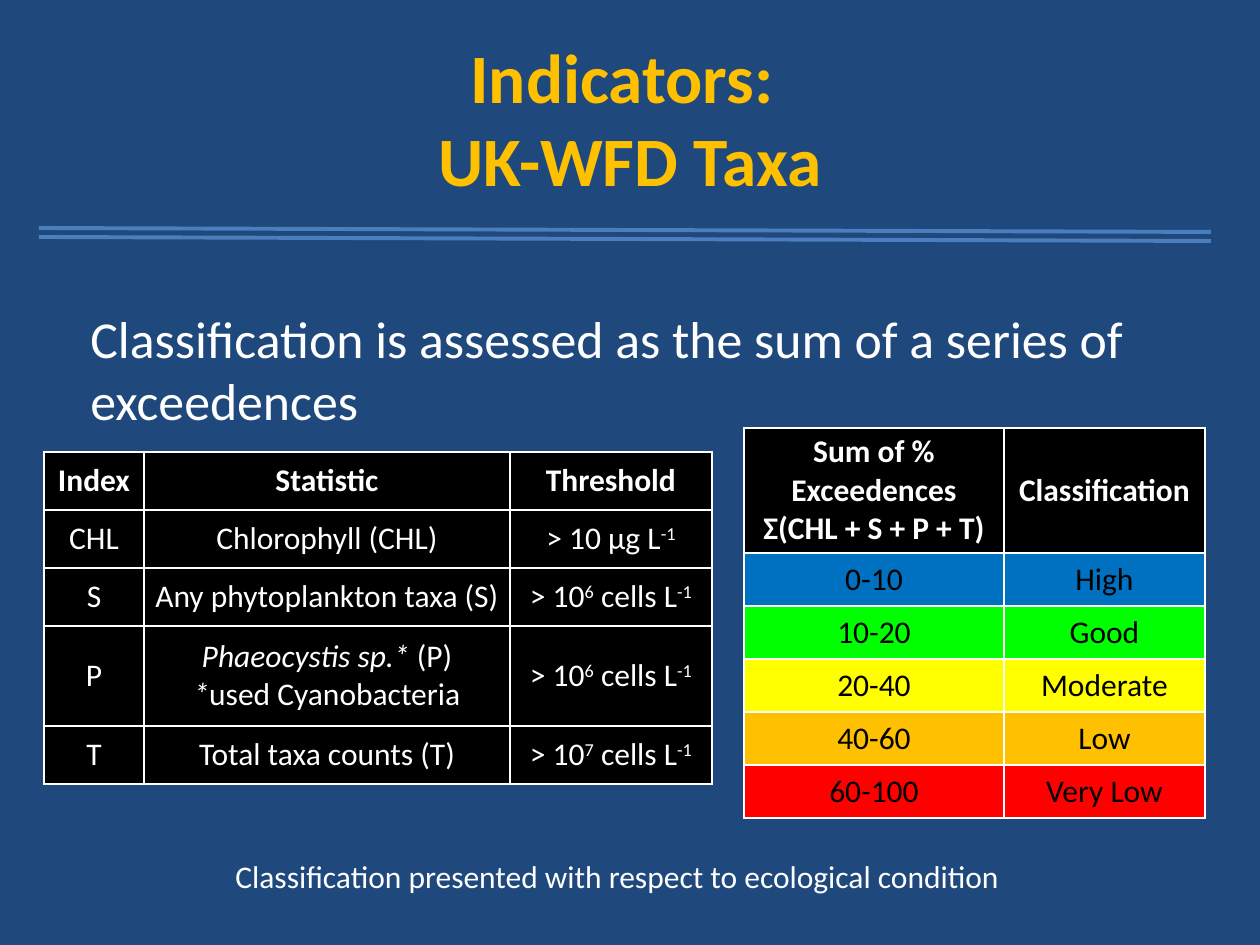
from lxml import etree
from pptx import Presentation
from pptx import util as u
from pptx.dml.color import RGBColor
from pptx.enum import shapes, text
from pptx.oxml import ns

PX = 914400 / 126
HUES = {
    "back": "1F497D", "gold": "FFC000", "white": "FFFFFF", "black": "000000",
    "rule": "4B7EBC", "blue": "0070C0", "green": "00FF00",
    "yellow": "FFFF00", "red": "FF0000",
}
INDEX = [
    ["Index", "Statistic", "Threshold"],
    ["CHL", "Chlorophyll (CHL)", "> 10 µg L^-1^"],
    ["S", "Any phytoplankton taxa (S)", "> 10^6^ cells L^-1^"],
    ["P", "_Phaeocystis sp.* _(P)\n_*_used Cyanobacteria", "> 10^6^ cells L^-1^"],
    ["T", "Total taxa counts (T)", "> 10^7^ cells L^-1^"],
]
CLASSES = [
    ["Sum of % Exceedences\nΣ(CHL + S + P + T)", "Classification"],
    ["0-10", "High"],
    ["10-20", "Good"],
    ["20-40", "Moderate"],
    ["40-60", "Low"],
    ["60-100", "Very Low"],
]


def px(n):
    return u.Emu(round(n * PX))


def hue(name):
    return RGBColor.from_string(HUES[name])


def style(run, size, color, bold=False):
    font = run.font
    font.name = "Calibri"
    font.size = u.Pt(size)
    font.bold = bold
    font.color.rgb = hue(color)


def label(slide, box, words, size, color, bold=False):
    frame = slide.shapes.add_textbox(*map(px, box)).text_frame
    frame.word_wrap = True
    frame.text = words
    for run in frame.paragraphs[0].runs:
        style(run, size, color, bold)
    return frame


def title(slide, box):
    frame = label(slide, box, "Indicators: \vUK-WFD Taxa", 39.6, "gold", True)
    frame.vertical_anchor = text.MSO_ANCHOR.MIDDLE
    frame.paragraphs[0].alignment = text.PP_ALIGN.CENTER


def rules(slide, box):
    x, y, w, h = box
    for top in (y, y + 9):
        line = slide.shapes.add_connector(
            shapes.MSO_CONNECTOR.STRAIGHT, px(x), px(top), px(x + w), px(top + h))
        line.line.color.rgb = hue("rule")
        line.line.width = u.Pt(2.25)
        etree.SubElement(line._element.spPr, ns.qn("a:effectLst"))


def body(slide, box):
    frame = label(
        slide, box,
        "Classification is assessed as the sum of a series of exceedences",
        29.6, "white")
    frame.paragraphs[0].space_before = u.Pt(6)


def edge(cell):
    props = cell._tc.get_or_add_tcPr()
    for spot, side in enumerate(("lnL", "lnR", "lnT", "lnB")):
        line = etree.Element(ns.qn("a:" + side), w=str(u.Pt(1)))
        fill = etree.SubElement(line, ns.qn("a:solidFill"))
        etree.SubElement(fill, ns.qn("a:srgbClr"), val=HUES["white"])
        props.insert(spot, line)


def write(para, words, color, bold):
    para.alignment = text.PP_ALIGN.CENTER
    for i, part in enumerate(words.split("_")):
        for j, bit in enumerate(part.split("^")):
            if bit:
                run = para.add_run()
                run.text = bit
                style(run, 18, color, bold)
                if i % 2:
                    run.font.italic = True
                if j % 2:
                    run.font._element.set("baseline", "30000")


def paint(cell, words, fill, color, bold):
    cell.fill.solid()
    cell.fill.fore_color.rgb = hue(fill)
    cell.margin_left = cell.margin_right = px(9)
    cell.margin_top = cell.margin_bottom = px(5)
    cell.vertical_anchor = text.MSO_ANCHOR.MIDDLE
    edge(cell)
    frame = cell.text_frame
    for i, line in enumerate(words.split("\n")):
        para = frame.add_paragraph() if i else frame.paragraphs[0]
        write(para, line, color, bold)


def grid(slide, spot, data, wide, high, fills, color):
    box = (*spot, sum(wide), sum(high))
    table = slide.shapes.add_table(len(high), len(wide), *map(px, box)).table
    for col, w in zip(table.columns, wide):
        col.width = px(w)
    for r, (row, h) in enumerate(zip(data, high)):
        table.rows[r].height = px(h)
        for c, words in enumerate(row):
            ink = color if r else "white"
            paint(table.cell(r, c), words, fills[r], ink, r == 0)


def note(slide, box):
    frame = label(
        slide, box, "Classification presented with respect to ecological condition",
        18, "white")
    frame.word_wrap = False
    frame.auto_size = text.MSO_AUTO_SIZE.SHAPE_TO_FIT_TEXT


def main():
    deck = Presentation()
    deck.slide_width, deck.slide_height = px(1260), px(945)
    slide = deck.slides.add_slide(deck.slide_layouts[6])
    slide.background.fill.solid()
    slide.background.fill.fore_color.rgb = hue("back")
    title(slide, (63, 38, 1134, 158))
    body(slide, (78, 300, 1086, 130))
    grid(slide, (44, 452), INDEX, (100, 366, 202), (58, 58, 58, 100, 58),
         ["black"] * 5, "white")
    grid(slide, (744, 428), CLASSES, (260, 201), [125] + [53] * 5,
         ["black", "blue", "green", "yellow", "gold", "red"], "black")
    rules(slide, (39, 228, 1172, 4))
    note(slide, (223, 851, 799, 50))
    deck.save("out.pptx")


if __name__ == "__main__":
    main()
